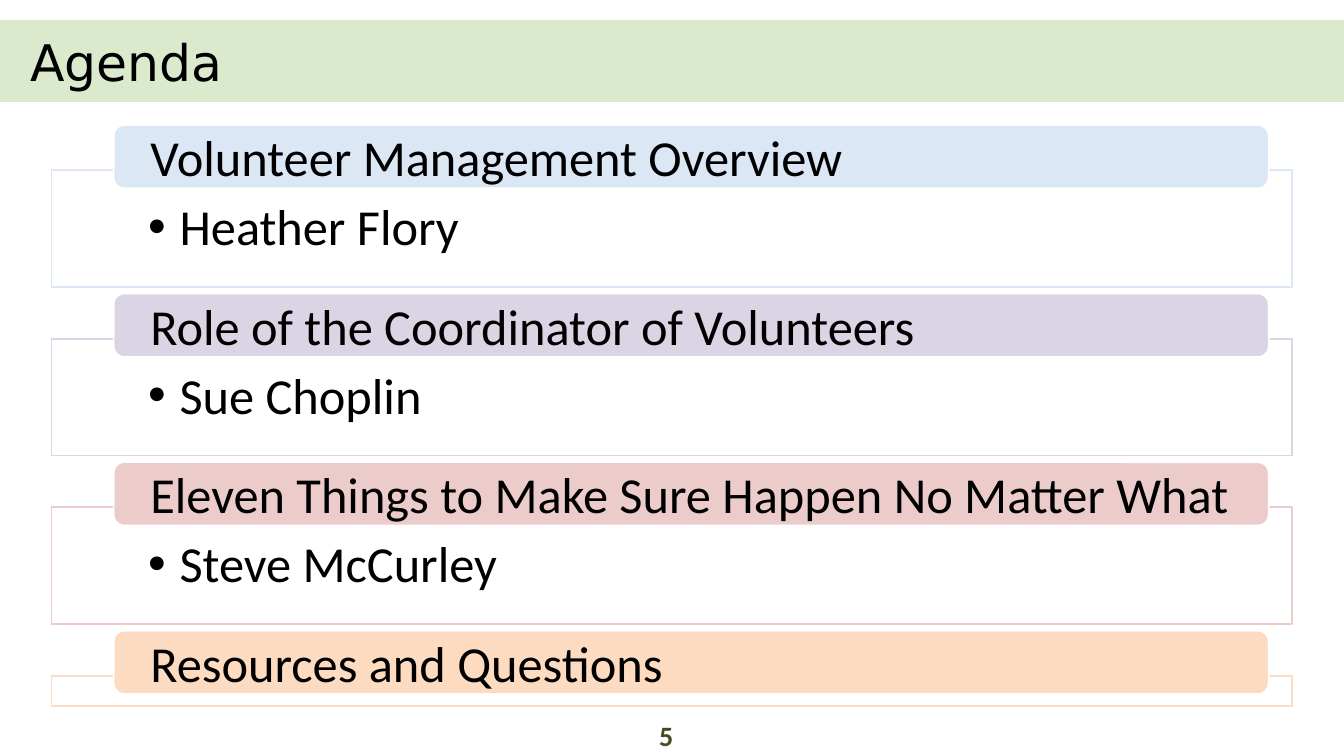
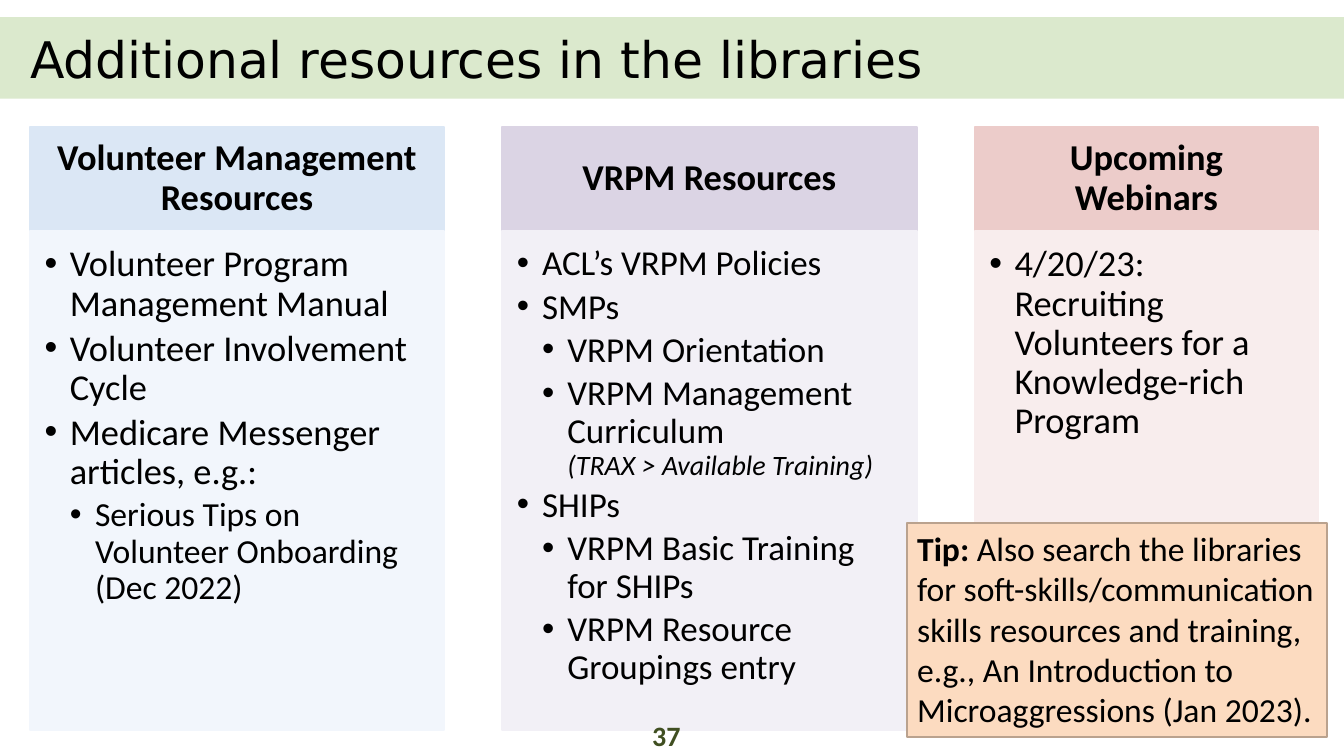
from lxml import etree
from pptx import Presentation
from pptx.dml.color import RGBColor
from pptx.enum import shapes, text
from pptx.oxml import ns
from pptx.util import Pt

BLACK = RGBColor(0x00, 0x00, 0x00)
WHITE = RGBColor(0xFF, 0xFF, 0xFF)
BAND = RGBColor(0xDB, 0xE9, 0xCD)
NUMBER = RGBColor(0x40, 0x4F, 0x21)
BLUE = RGBColor(0xDB, 0xE7, 0xF5)
PURPLE = RGBColor(0xDB, 0xD4, 0xE4)
PINK = RGBColor(0xEC, 0xCC, 0xCA)
ORANGE = RGBColor(0xFC, 0xDB, 0xC0)
ORANGE_EDGE = RGBColor(0xBA, 0xA2, 0x8E)
PALE_BLUE = RGBColor(0xF2, 0xF6, 0xFC)
PALE_PURPLE = RGBColor(0xF2, 0xF0, 0xF6)
PALE_PINK = RGBColor(0xF8, 0xED, 0xED)

LEFT, CENTER = text.PP_ALIGN.LEFT, text.PP_ALIGN.CENTER
TOP, MIDDLE = text.MSO_ANCHOR.TOP, text.MSO_ANCHOR.MIDDLE
RECT = shapes.MSO_SHAPE.RECTANGLE
ROUNDED = shapes.MSO_SHAPE.ROUNDED_RECTANGLE
BREAK = "\n"


def set_values(target, values):
    for name, value in values.items():
        setattr(target, name, value)


class Deck:
    """Holds the shared style and the current slide."""

    BODY_FONT = "Calibri"
    TITLE_FONT = "DejaVu Sans"
    WIDTH, HEIGHT = 960, 540

    def __init__(self):
        self.deck = Presentation()
        self.deck.slide_width = Pt(self.WIDTH)
        self.deck.slide_height = Pt(self.HEIGHT)
        self.page = None

    def add_page(self, title, band_top):
        self.page = self.deck.slides.add_slide(self.deck.slide_layouts[5])
        band = self.page.shapes.title
        set_values(band, dict(left=Pt(0), top=Pt(band_top),
                              width=Pt(self.WIDTH), height=Pt(58.3)))
        band.fill.solid()
        band.fill.fore_color.rgb = BAND
        self.set_frame(band, (21.6, 7.2, 7.2, 7.2), MIDDLE)
        self.add_text(band, [[(title, {})]], 36, face=self.TITLE_FONT)

    def set_frame(self, box, insets, anchor):
        left, top, right, bottom = map(Pt, insets)
        set_values(box.text_frame, dict(
            margin_left=left, margin_top=top, margin_right=right,
            margin_bottom=bottom, vertical_anchor=anchor,
            word_wrap=True, auto_size=text.MSO_AUTO_SIZE.NONE))

    def add_text(self, box, paras, size, color=BLACK, face=BODY_FONT,
                 align=LEFT, bold=False, spacing=1.0, after=0, bullets=()):
        """Each para is a list of (text, font values); bullets are (indent, hanging)."""
        frame = box.text_frame
        for index, spans in enumerate(paras):
            para = frame.add_paragraph() if index else frame.paragraphs[0]
            if bullets:
                self.add_bullet(para, *bullets[index])
            set_values(para, dict(alignment=align, line_spacing=spacing,
                                  space_before=Pt(0), space_after=Pt(after)))
            for words, values in spans:
                if words == BREAK:
                    para.add_line_break()
                    continue
                span = para.add_run()
                span.text = words
                set_values(span.font,
                           dict(name=face, size=Pt(size), bold=bold) | values)
                span.font.color.rgb = color

    def add_bullet(self, para, indent, hanging):
        props = para._p.get_or_add_pPr()
        props.set("marL", str(Pt(indent)))
        props.set("indent", str(-Pt(hanging)))
        font = etree.SubElement(props, ns.qn("a:buFont"))
        font.set("typeface", "Arial")
        mark = etree.SubElement(props, ns.qn("a:buChar"))
        mark.set("char", "•")

    def add_box(self, place, fill, edge, insets=(7.2, 3.6, 7.2, 3.6),
                anchor=TOP, kind=RECT):
        box = self.page.shapes.add_shape(kind, *map(Pt, place))
        box.shadow.inherit = False
        box.fill.solid()
        box.fill.fore_color.rgb = fill
        box.line.color.rgb = edge
        box.line.width = Pt(1.25)
        self.set_frame(box, insets, anchor)
        return box

    def add_number(self, number):
        box = self.page.shapes.add_textbox(*map(Pt, (432, 509.8, 88, 26)))
        self.set_frame(box, (7.2, 3.6, 7.2, 3.6), TOP)
        self.add_text(box, [[(number, {})]], 20, NUMBER, align=CENTER, bold=True)

    def add_topic(self, top, topic, speaker, color):
        """A framed panel with a rounded bar over its upper edge."""
        height = 83.5 if speaker else 21.6
        panel = self.add_box((36.8, top + 32.3, 886.4, height), WHITE, color,
                             (69, 18, 69, 20))
        if speaker:
            self.add_text(panel, [[(speaker, {})]], 36, bullets=[(22.5, 22.5)])
        bar = self.add_box((81.2, top, 825, 45.2), color, WHITE,
                           (24, 0, 20, 0), MIDDLE, ROUNDED)
        self.add_text(bar, [[(topic, {})]], 36)

    def add_column(self, left, width, heading, items, size, color, pale):
        """A heading cell over a bulleted list; items are (level, spans)."""
        head = self.add_box((left, 90.5, width, 74.3), color, color,
                            (14.2, 8.1, 14.2, 8.1), MIDDLE)
        self.add_text(head, [[(heading, {})]], 26, align=CENTER, bold=True,
                      spacing=0.9)
        body = self.add_box((left, 164.8, width, 356.4), pale, pale,
                            (10.5, 10.5, 14, 16))
        self.add_text(body, [spans for _, spans in items], size, spacing=0.9,
                      after=4, bullets=[(18 * level, 18) for level, _ in items])


def main():
    show = Deck()

    # Agenda
    show.add_page("Agenda", 14.4)
    topics = [
        ("Volunteer Management Overview", "Heather Flory", BLUE),
        ("Role of the Coordinator of Volunteers", "Sue Choplin", PURPLE),
        ("Eleven Things to Make Sure Happen No Matter What", "Steve McCurley", PINK),
        ("Resources and Questions", None, ORANGE),
    ]
    for row, topic in enumerate(topics):
        show.add_topic(89.3 + 120.4 * row, *topic)
    show.add_number("5")

    # Library resources
    show.add_page("Additional resources in the libraries", 12.2)
    columns = [
        (296, "Volunteer Management Resources", [
            (1, [("Volunteer Program Management Manual", {})]),
            (1, [("Volunteer Involvement Cycle", {})]),
            (1, [("Medicare Messenger articles, e.g.:", {})]),
            (2, [("Serious Tips on Volunteer Onboarding (Dec 2022)",
                  dict(size=Pt(24)))]),
        ], 26, BLUE, PALE_BLUE),
        (296, "VRPM Resources", [
            (1, [("ACL’s VRPM Policies", {})]),
            (1, [("SMPs", {})]),
            (2, [("VRPM Orientation", {})]),
            (2, [("VRPM Management Curriculum ", {}), (BREAK, {}),
                 ("(TRAX > Available Training)", dict(size=Pt(20), italic=True))]),
            (1, [("SHIPs", {})]),
            (2, [("VRPM Basic Training for SHIPs", {})]),
            (2, [("VRPM Resource Groupings entry", {})]),
        ], 25, PURPLE, PALE_PURPLE),
        (245.5, "Upcoming Webinars", [
            (1, [("4/20/23: Recruiting Volunteers for a Knowledge-rich Program", {})]),
        ], 26, PINK, PALE_PINK),
    ]
    for place, column in enumerate(columns):
        show.add_column(21.4 + 337.4 * place, *column)
    show.add_number("37")

    # Tip over the last column
    tip = show.add_box((648, 373.6, 300, 152.8), ORANGE, ORANGE_EDGE)
    show.add_text(tip, [[
        ("Tip: ", dict(bold=True)),
        ("Also search the libraries for soft-skills/communication skills resources "
         "and training, e.g., An Introduction to Microaggressions (Jan 2023).", {}),
    ]], 24)

    show.deck.save("out.pptx")


if __name__ == "__main__":
    main()
